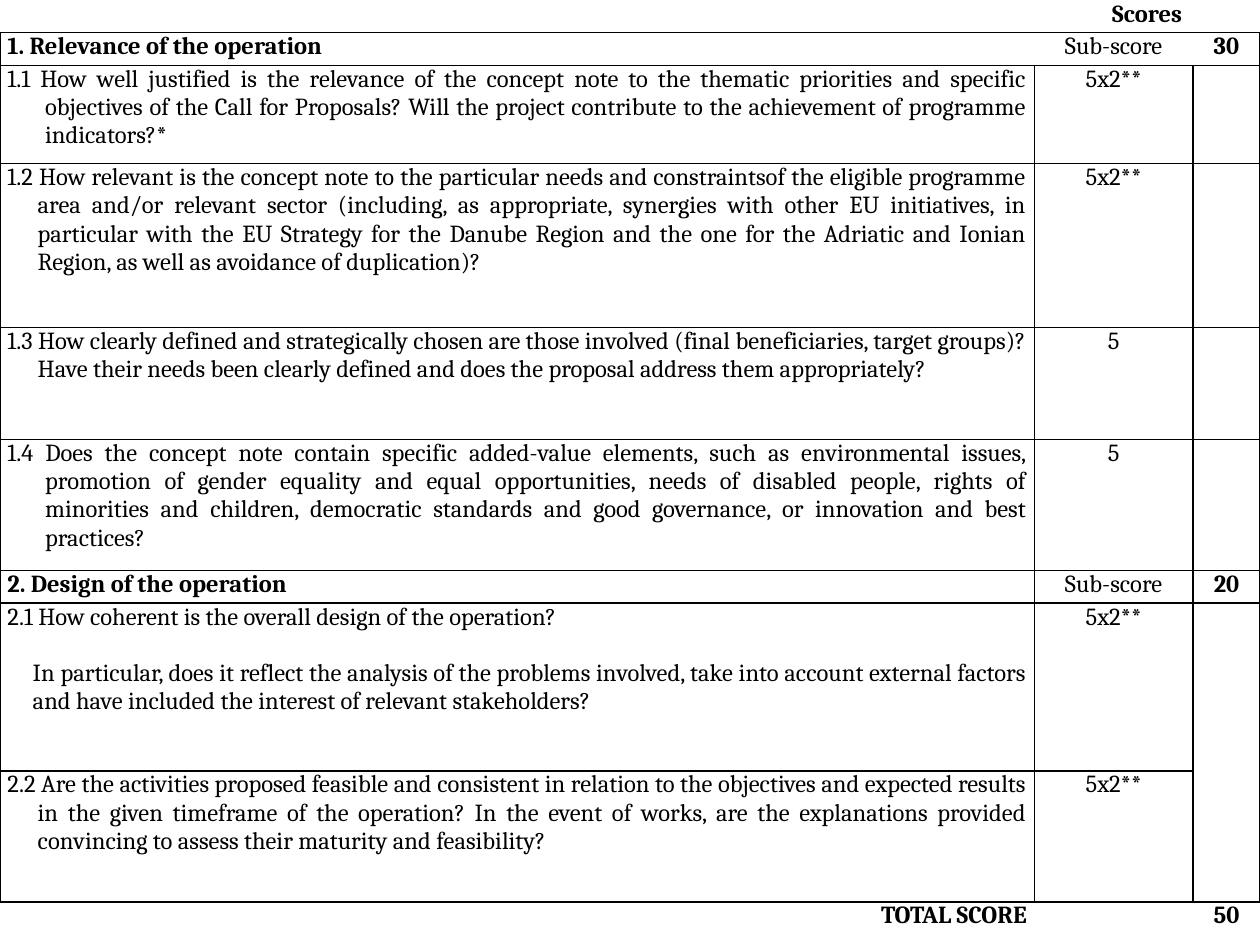
from lxml import etree
from pptx import Presentation
from pptx.dml.color import RGBColor
from pptx.enum.text import MSO_ANCHOR, PP_ALIGN
from pptx.oxml.ns import qn
from pptx.util import Cm, Pt

CENTER, JUSTIFY, RIGHT = PP_ALIGN.CENTER, PP_ALIGN.JUSTIFY, PP_ALIGN.RIGHT
TOP = MSO_ANCHOR.TOP
BLACK = RGBColor(0, 0, 0)
FONT = {"name": "Cambria", "size": Pt(14)}
SPACING = {"space_before": Pt(6), "space_after": Pt(10)}
CELL = {"margin_left": Cm(0.15), "margin_right": Cm(0.15), "margin_top": 0,
        "margin_bottom": 0, "vertical_anchor": TOP}
FLUSH, NARROW, WIDE, INSET = (0, 0), (0.61, -0.61), (0.76, -0.76), (0.51, 0)

COLS = [20.85, 3.2, 1.35]
# height, criterion paragraphs (text, indent), sub-score, score
ROWS = [
    (0.66, [], "Scores", ""),
    (0.66, [("1. Relevance of the operation", FLUSH)], "Sub-score", "30"),
    (1.98, [("1.1 How well justified is the relevance of the concept note to the thematic "
             "priorities and specific objectives of the Call for Proposals? Will the project "
             "contribute to the achievement of programme indicators?*", WIDE)], "5x2**", ""),
    (3.3, [("1.2 How relevant is the concept note to the particular needs and constraintsof "
            "the eligible programme area and/or relevant sector (including, as appropriate, "
            "synergies with other EU initiatives, in particular with the EU Strategy for the "
            "Danube Region and the one for the Adriatic and Ionian Region, as well as "
            "avoidance of duplication)?", NARROW)], "5x2**", ""),
    (2.26, [("1.3 How clearly defined and strategically chosen are those involved (final "
             "beneficiaries, target groups)? Have their needs been clearly defined and does "
             "the proposal address them appropriately?", NARROW)], "5", ""),
    (2.64, [("1.4 Does the concept note contain specific added-value elements, such as "
             "environmental issues, promotion of gender equality and equal opportunities, "
             "needs of disabled people, rights of minorities and children, democratic "
             "standards and good governance, or innovation and best practices?", WIDE)],
     "5", ""),
    (0.66, [("2. Design of the operation", FLUSH)], "Sub-score", "20"),
    (3.38, [("2.1 How coherent is the overall design of the operation?", NARROW),
            ("In particular, does it reflect the analysis of the problems involved, take into "
             "account external factors and have included the interest of relevant "
             "stakeholders?", INSET)], "5x2**", ""),
    (2.64, [("2.2 Are the activities proposed feasible and consistent in relation to the "
             "objectives and expected results in the given timeframe of the operation? In the "
             "event of works, are the explanations provided convincing to assess their "
             "maturity and feasibility?", NARROW)], "5x2**", ""),
    (0.91, [("TOTAL SCORE", FLUSH)], "", "50"),
]
LAST = len(ROWS) - 1
BOLD_ROWS = (0, 1, 6, LAST)
BORDERS = {0: ("B", "B", "B"), 1: ("LTB", "TB", "RTB"), LAST: ("T", "T", "T")}


def set_attrs(obj, values):
    for name, value in values.items():
        setattr(obj, name, value)


def set_borders(cell, sides):
    tc_pr = cell._tc.get_or_add_tcPr()
    for side in "LRTB":
        ln = etree.SubElement(tc_pr, qn(f"a:ln{side}"), w=str(Pt(1)))
        if side in sides:
            fill = etree.SubElement(ln, qn("a:solidFill"))
            etree.SubElement(fill, qn("a:srgbClr"), val=str(BLACK))
        else:
            etree.SubElement(ln, qn("a:noFill"))


def write(cell, paragraphs, align, bold):
    tf = cell.text_frame
    if not paragraphs:
        etree.SubElement(tf.paragraphs[0]._p, qn("a:endParaRPr"), sz="1400")
    for i, (text, (left, indent)) in enumerate(paragraphs):
        p = tf.add_paragraph() if i else tf.paragraphs[0]
        set_attrs(p, {"alignment": align, **SPACING})
        if left:
            p_pr = p._p.get_or_add_pPr()
            p_pr.set("marL", str(Cm(left)))
            p_pr.set("indent", str(Cm(indent)))
        r = p.add_run()
        r.text = text
        set_attrs(r.font, {"bold": bold, **FONT})
        r.font.color.rgb = BLACK


prs = Presentation()
prs.slide_width, prs.slide_height = Cm(25.4), Cm(19.05)
s = prs.slides.add_slide(prs.slide_layouts[6])
table = s.shapes.add_table(len(ROWS), len(COLS), 0, 0, Cm(25.4), Cm(19.05)).table
set_attrs(table, {"first_row": False, "horz_banding": False})
for col, width in zip(table.columns, COLS):
    col.width = Cm(width)

for i, (height, criterion, sub_score, score) in enumerate(ROWS):
    table.rows[i].height = Cm(height)
    heading = i in BOLD_ROWS
    contents = [
        (criterion, RIGHT if i == LAST else JUSTIFY, heading),
        ([(sub_score, FLUSH)] if sub_score else [], CENTER, i == 0),
        ([(score, FLUSH)] if score else [], CENTER, True),
    ]
    for j, (paragraphs, align, bold) in enumerate(contents):
        cell = table.cell(i, j)
        set_attrs(cell, CELL)
        write(cell, paragraphs, align, bold)
        set_borders(cell, BORDERS[i][j] if i in BORDERS else "LRTB")
        cell.fill.background()

table.cell(0, 1).merge(table.cell(0, 2))
table.cell(7, 2).merge(table.cell(8, 2))
prs.save("out.pptx")
